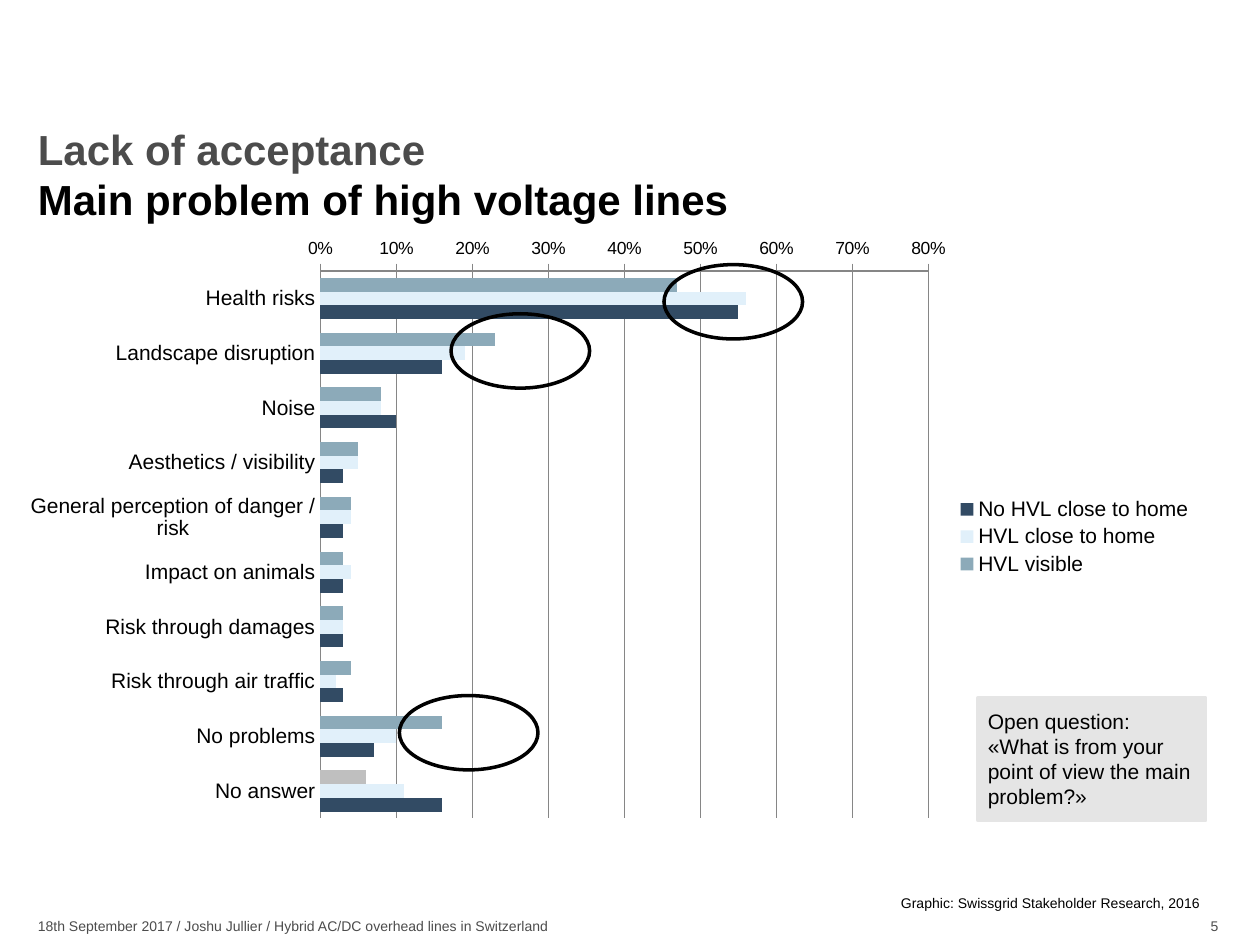
from lxml import etree
from pptx import Presentation
from pptx.chart.data import CategoryChartData
from pptx.dml.color import RGBColor
from pptx.enum.chart import XL_AXIS_CROSSES, XL_CHART_TYPE, XL_LEGEND_POSITION, XL_TICK_MARK
from pptx.enum.shapes import MSO_SHAPE
from pptx.enum.text import MSO_ANCHOR, PP_ALIGN
from pptx.oxml import parse_xml
from pptx.util import Inches, Pt

BAR_CLUSTERED = XL_CHART_TYPE.BAR_CLUSTERED
LEGEND_RIGHT = XL_LEGEND_POSITION.RIGHT
CROSS_AT_MAXIMUM = XL_AXIS_CROSSES.MAXIMUM
TICK_NONE, TICK_OUTSIDE = XL_TICK_MARK.NONE, XL_TICK_MARK.OUTSIDE
OVAL, RECTANGLE = MSO_SHAPE.OVAL, MSO_SHAPE.RECTANGLE
TOP = MSO_ANCHOR.TOP
LEFT, RIGHT = PP_ALIGN.LEFT, PP_ALIGN.RIGHT

FONT = "Arial"
BLACK, DARK_GREY, MID_GREY = "000000", "4C4C4C", "868686"
LIGHT_GREY, NO_ANSWER_GREY = "E5E5E5", "BFBFBF"


def color(hex_value):
    return RGBColor.from_string(hex_value)


def write(box, text, size, hex_value, align=LEFT, margin=0):
    """Fill a shape with one paragraph, the same margin on all sides."""
    frame = box.text_frame
    frame.word_wrap = True
    frame.vertical_anchor = TOP
    frame.margin_left = frame.margin_right = Inches(margin)
    frame.margin_top = frame.margin_bottom = Inches(margin)
    frame.text = text
    para = frame.paragraphs[0]
    para.alignment = align
    for span in para.runs:
        span.font.name = FONT
        span.font.size = Pt(size)
        span.font.color.rgb = color(hex_value)
    return para


deck = Presentation()
deck.slide_width, deck.slide_height = Inches(10), Inches(7.5)
page = deck.slides.add_slide(deck.slide_layouts[6])

# Title and footer
title_box = page.shapes.add_textbox(Inches(0.3), Inches(0.98), Inches(9.41), Inches(0.81))
title = write(title_box, "Lack of acceptance\vMain problem of high voltage lines", 24, DARK_GREY)
title.line_spacing = Pt(28.8)
for span in title.runs:
    span.font.bold = True
title.runs[1].font.color.rgb = color(BLACK)

for left, top, width, text, hex_value, align in [
    (0.3, 7.28, 6.85, "18th September 2017 / Joshu Jullier / Hybrid AC/DC overhead lines in Switzerland",
     DARK_GREY, LEFT),
    (7.59, 7.28, 2.08, "5", DARK_GREY, RIGHT),
    (7.15, 7.1, 2.52, "Graphic: Swissgrid Stakeholder Research, 2016", BLACK, LEFT),
]:
    box = page.shapes.add_textbox(Inches(left), Inches(top), Inches(width), Inches(0.13))
    write(box, text, 8, hex_value, align)

# Bar chart
problems = CategoryChartData(number_format="0%")
problems.categories = [
    "Health risks", "Landscape disruption", "Noise", "Aesthetics / visibility",
    "General perception of danger / risk", "Impact on animals", "Risk through damages",
    "Risk through air traffic", "No problems", "No answer",
]
series_rows = [
    ("HVL visible", "8CAAB9", [0.47, 0.23, 0.08, 0.05, 0.04, 0.03, 0.03, 0.04, 0.16, 0.06]),
    ("HVL close to home", "E1F0FA", [0.56, 0.19, 0.08, 0.05, 0.04, 0.04, 0.03, 0.02, 0.1, 0.11]),
    ("No HVL close to home", "324B64", [0.55, 0.16, 0.1, 0.03, 0.03, 0.03, 0.03, 0.03, 0.07, 0.16]),
]
for name, _, values in series_rows:
    problems.add_series(name, values)

chart = page.shapes.add_chart(
    BAR_CLUSTERED, Inches(0.2), Inches(1.78), Inches(9.37), Inches(4.96), problems).chart
chart.has_title = False
chart.font.name = FONT
chart.font.size = Pt(10)
chart.font.color.rgb = color(BLACK)

plot = chart.plots[0]
plot.gap_width = 100
plot.overlap = 0
plot.vary_by_categories = False
for series, (_, hex_value, _) in zip(plot.series, series_rows):
    series.format.fill.solid()
    series.format.fill.fore_color.rgb = color(hex_value)
no_answer = plot.series[0].points[9].format.fill
no_answer.solid()
no_answer.fore_color.rgb = color(NO_ANSWER_GREY)

category_axis = chart.category_axis
category_axis.reverse_order = True
category_axis.crosses = CROSS_AT_MAXIMUM
category_axis.major_tick_mark = TICK_NONE
category_axis.format.line.fill.background()
category_axis.tick_labels.font.size = Pt(12)

value_axis = chart.value_axis
value_axis.minimum_scale, value_axis.maximum_scale = 0, 0.8
value_axis.major_unit = 0.1
value_axis.major_tick_mark = TICK_OUTSIDE
value_axis.tick_labels.number_format = "0%"
value_axis.tick_labels.number_format_is_linked = False
value_axis.has_major_gridlines = True
for line in (value_axis.format.line, value_axis.major_gridlines.format.line):
    line.color.rgb = color(MID_GREY)
    line.width = Pt(0.75)

chart.has_legend = True
chart.legend.position = LEGEND_RIGHT
chart.legend.include_in_layout = False
chart.legend.font.size = Pt(12)

# Fixed inner plot area, as fractions of the chart
chart_uri = "http://schemas.openxmlformats.org/drawingml/2006/chart"
plot_area = chart.element.find(f".//{{{chart_uri}}}plotArea")
for old_layout in plot_area.findall(f"{{{chart_uri}}}layout"):
    plot_area.remove(old_layout)
layout = parse_xml(f'<c:layout xmlns:c="{chart_uri}"><c:manualLayout/></c:layout>')
for tag, value in [("layoutTarget", "inner"), ("xMode", "edge"), ("yMode", "edge"),
                   ("x", 0.25), ("y", 0.075), ("w", 0.515), ("h", 0.876)]:
    etree.SubElement(layout[0], f"{{{chart_uri}}}{tag}").set("val", str(value))
plot_area.insert(0, layout)

# Highlight rings
for left, top in [(5.27, 2.1), (3.58, 2.49), (3.17, 5.52)]:
    ring = page.shapes.add_shape(OVAL, Inches(left), Inches(top), Inches(1.1), Inches(0.59))
    ring.shadow.inherit = False
    ring.fill.background()
    ring.line.color.rgb = color(BLACK)
    ring.line.width = Pt(2)

# Survey question
question_box = page.shapes.add_shape(
    RECTANGLE, Inches(7.76), Inches(5.54), Inches(1.81), Inches(0.97))
question_box.shadow.inherit = False
question_box.fill.solid()
question_box.fill.fore_color.rgb = color(LIGHT_GREY)
question_box.line.color.rgb = color(LIGHT_GREY)
question_box.line.width = Pt(2)
question = write(question_box, "Open question: «What is from your point of view the main problem?»",
                 12, BLACK, margin=0.08)
question.line_spacing = Pt(14.4)

deck.save("out.pptx")
